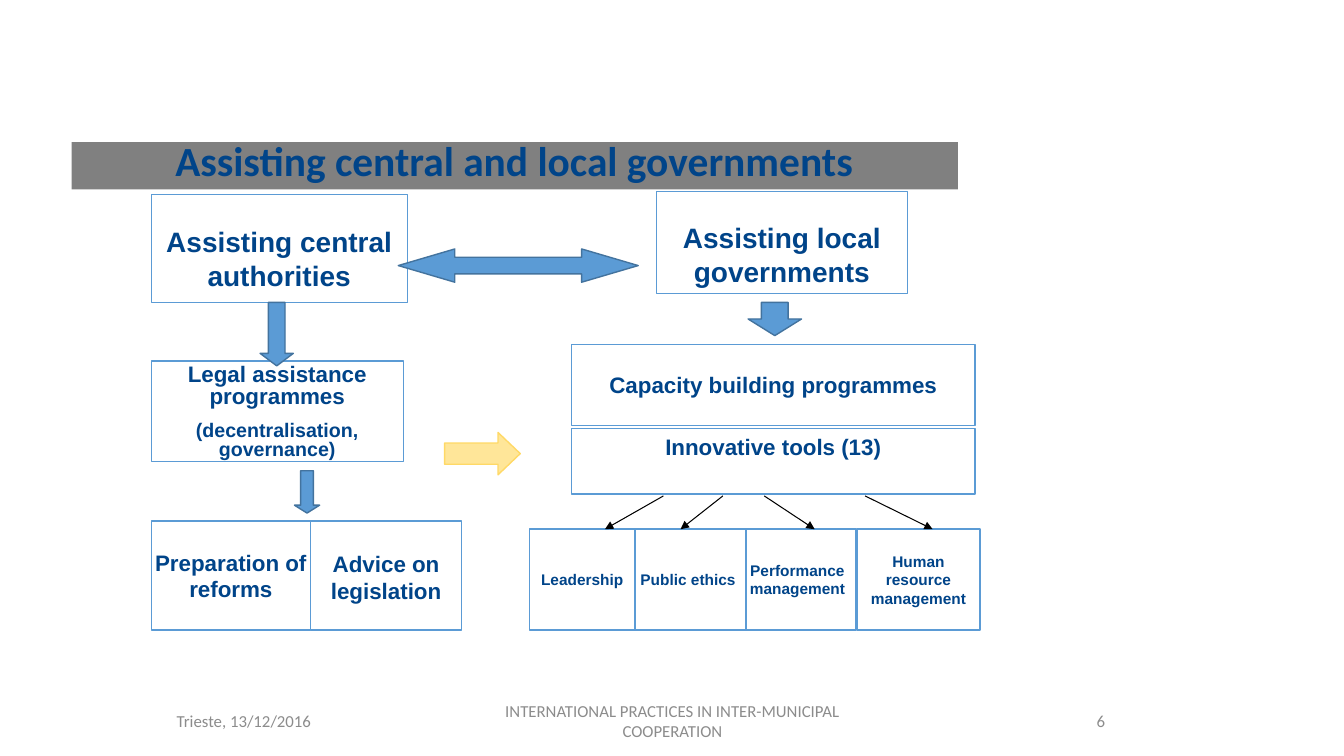
from lxml.etree import SubElement
from pptx import Presentation
from pptx.dml.color import RGBColor
from pptx.enum.shapes import MSO_CONNECTOR, MSO_SHAPE
from pptx.enum.text import MSO_ANCHOR, MSO_AUTO_SIZE, PP_ALIGN
from pptx.oxml.ns import qn
from pptx.util import Inches, Pt

NAVY, BLUE, EDGE = "004489", "5B9BD5", "43739E"
GREY, MUTED, WHITE, BLACK = "808080", "8C8C8C", "FFFFFF", "000000"
SAND, GOLD = "FFE699", "FFD966"


def color(code):
    """Turn a hex string into a colour."""
    return RGBColor.from_string(code)


def paint(item, fill, line):
    """Give a shape a plain fill and a thin outline."""
    item.shadow.inherit = False
    item.fill.solid()
    item.fill.fore_color.rgb = color(fill)
    item.line.color.rgb = color(line)
    item.line.width = Pt(1)


def write(item, text, size, tint=NAVY, face="Arial", bold=True, anchor=MSO_ANCHOR.MIDDLE):
    """Set centred text in a shape and return its frame."""
    frame = item.text_frame
    frame.text = text
    frame.word_wrap = True
    frame.auto_size = MSO_AUTO_SIZE.NONE
    frame.vertical_anchor = anchor
    for para in frame.paragraphs:
        para.alignment = PP_ALIGN.CENTER
        for run in para.runs:
            run.font.size = Pt(size)
            run.font.name = face
            run.font.bold = bold
            run.font.color.rgb = color(tint)
    return frame


def card(slide, x, y, w, h, text, size, top=None):
    """Draw a white box; a top margin pins its text to the top."""
    item = slide.shapes.add_shape(MSO_SHAPE.RECTANGLE, Inches(x), Inches(y), Inches(w), Inches(h))
    paint(item, WHITE, BLUE)
    if top is None:
        return write(item, text, size)
    frame = write(item, text, size, anchor=MSO_ANCHOR.TOP)
    frame.margin_top = Inches(top)
    return frame


def arrow(slide, kind, x, y, w, h, head, fill=BLUE, line=EDGE):
    """Draw a block arrow with the given head length."""
    item = slide.shapes.add_shape(kind, Inches(x), Inches(y), Inches(w), Inches(h))
    item.adjustments[0] = 0.5
    item.adjustments[1] = head
    paint(item, fill, line)


def pointer(slide, x1, y1, x2, y2):
    """Draw a thin black line that ends in an arrowhead."""
    line = slide.shapes.add_connector(
        MSO_CONNECTOR.STRAIGHT, Inches(x1), Inches(y1), Inches(x2), Inches(y2))
    line.line.color.rgb = color(BLACK)
    line.line.width = Pt(0.75)
    SubElement(line.line._get_or_add_ln(), qn("a:tailEnd"), type="triangle")
    SubElement(line._element.spPr, qn("a:effectLst"))


def header(slide, x, y, w, h):
    """Place the title on its grey band."""
    title = slide.shapes.title
    title.left, title.top, title.width, title.height = map(Inches, (x, y, w, h))
    title.fill.solid()
    title.fill.fore_color.rgb = color(GREY)
    frame = write(title, "Assisting central and local governments", 29.6, face="Calibri")
    frame.paragraphs[0].line_spacing = 0.7


def central(slide, x, y):
    """Draw the branch for central authorities."""
    card(slide, x, y, 2.54, 1.07, "Assisting central authorities", 20, 0.3)
    legal = card(slide, x, y + 1.65, 2.5, 1,
                 "Legal assistance programmes\n(decentralisation, governance)", 16, 0.05)
    for para in legal.paragraphs:
        para.line_spacing = 0.8
        para.space_after = Pt(10)
    legal.paragraphs[1].runs[0].font.size = Pt(14)
    card(slide, x + 1.58, y + 3.24, 1.5, 1.08, "Advice on legislation", 16, 0.29)
    plan = card(slide, x, y + 3.24, 1.58, 1.08, "Preparation of\nreforms", 16)
    plan.word_wrap = False
    arrow(slide, MSO_SHAPE.DOWN_ARROW, x + 1.08, y + 1.07, 0.33, 0.63, 0.375)
    arrow(slide, MSO_SHAPE.DOWN_ARROW, x + 1.42, y + 2.74, 0.25, 0.42, 0.312)


def local(slide, x, y):
    """Draw the branch for local governments."""
    card(slide, x + 1.26, y, 2.49, 1.01, "Assisting local governments", 20, 0.29)
    arrow(slide, MSO_SHAPE.DOWN_ARROW, x + 2.17, y + 1.1, 0.53, 0.33, 0.5)
    card(slide, x + 0.42, y + 1.52, 4, 0.8, "Capacity building programmes", 16)
    card(slide, x + 0.42, y + 2.35, 4, 0.65, "Innovative tools (13)", 16, 0.05)
    tools = [
        (3.25, 1.22, "Human resource management", 3.33, 4),
        (2.08, 1.16, "Performance management", 2.33, 2.83),
        (1, 1.15, "Public ethics", 1.92, 1.5),
        (0, 1.05, "Leadership", 1.33, 0.75),
    ]
    for left, width, name, start, end in tools:
        card(slide, x + left, y + 3.35, width, 1, name, 11)
        pointer(slide, x + start, y + 3.02, x + end, y + 3.35)


def links(slide, x, y):
    """Draw the arrows between the two branches."""
    arrow(slide, MSO_SHAPE.LEFT_RIGHT_ARROW, x, y, 2.38, 0.33, 1.7)
    arrow(slide, MSO_SHAPE.RIGHT_ARROW, x + 0.46, y + 1.82, 0.75, 0.42, 0.524, SAND, GOLD)


def footer(slide, x, y, h):
    """Write the date, event and page number."""
    parts = [
        (0, 3, "Trieste, 13/12/2016"),
        (3.5, 4.5, "INTERNATIONAL PRACTICES IN INTER-MUNICIPAL COOPERATION"),
        (8.5, 3, "6"),
    ]
    for left, width, text in parts:
        item = slide.shapes.add_textbox(Inches(x + left), Inches(y), Inches(width), Inches(h))
        write(item, text, 12, MUTED, "Calibri", False)


def main():
    """Build and save the slide."""
    deck = Presentation()
    deck.slide_width, deck.slide_height = Inches(13.33), Inches(7.5)
    slide = deck.slides.add_slide(deck.slide_layouts[5])
    header(slide, 0.71, 1.41, 8.79, 0.47)
    central(slide, 1.5, 1.93)
    local(slide, 5.25, 1.9)
    links(slide, 3.95, 2.47)
    footer(slide, 0.92, 6.95, 0.4)
    deck.save("out.pptx")


if __name__ == "__main__":
    main()
